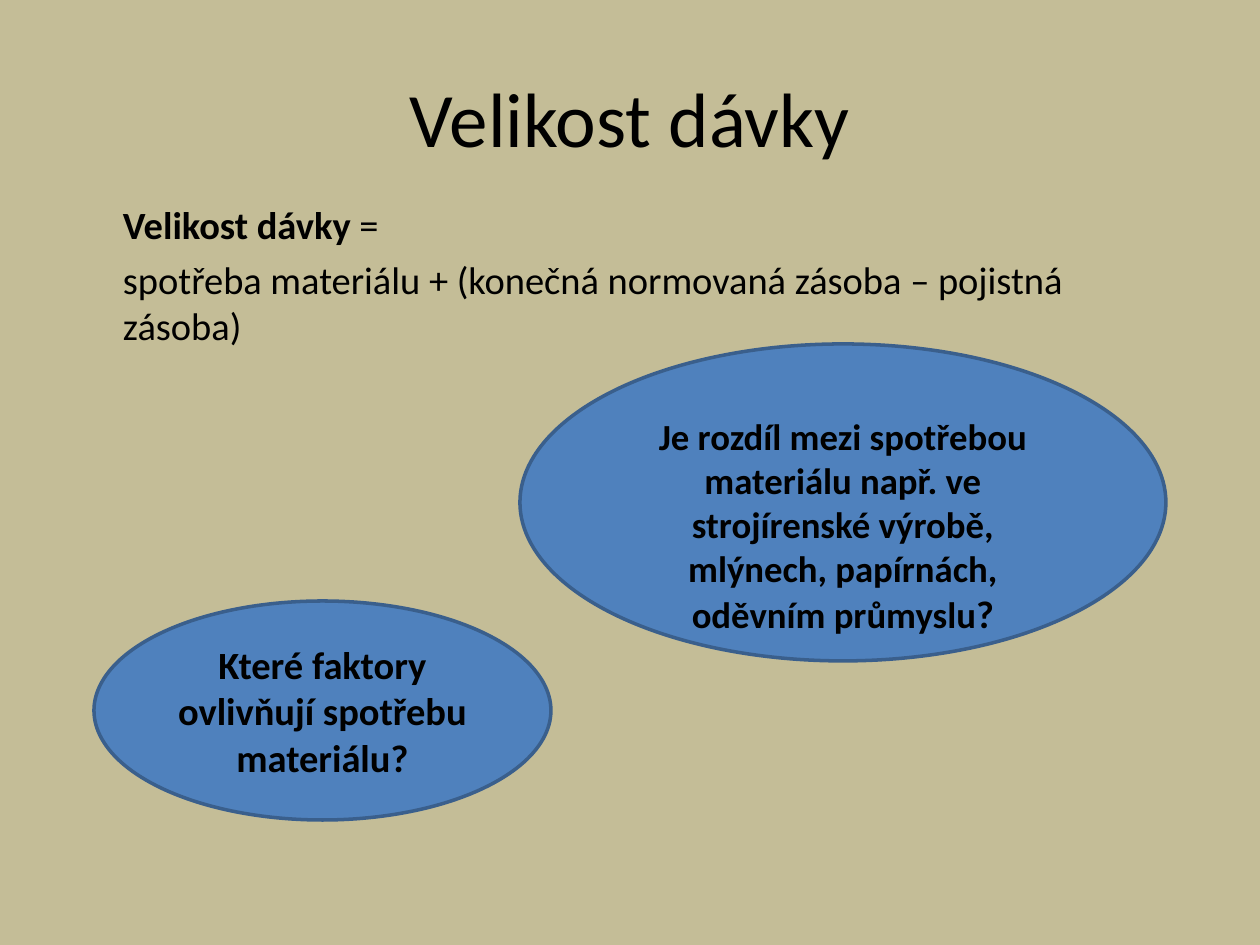
from dataclasses import dataclass

from pptx import Presentation
from pptx.dml.color import RGBColor
from pptx.enum.shapes import MSO_SHAPE
from pptx.enum.text import MSO_ANCHOR, PP_ALIGN
from pptx.util import Emu, Pt

PX = 914400 // 126
FONT = "Calibri"
COLORS = {"background": "C4BD97", "text": "000000", "fill": "4F81BD", "line": "3A5F8C"}
ELLIPSE = MSO_SHAPE.OVAL
TOP, MIDDLE = MSO_ANCHOR.TOP, MSO_ANCHOR.MIDDLE
LEFT, CENTER = PP_ALIGN.LEFT, PP_ALIGN.CENTER


@dataclass
class Run:
    text: str
    size: int = 22
    bold: bool = False


@dataclass
class Question:
    box: tuple[int, int, int, int]
    runs: list[Run]
    inset_top: int = 6


QUESTIONS = [
    Question((520, 344, 646, 317), [
        Run("Je rozdíl mezi spotřebou materiálu např. ve strojírenské výrobě, "
            "mlýnech, papírnách, oděvním průmyslu", 21, True),
        Run("?", 22, True),
    ], inset_top=51),
    Question((94, 601, 457, 219), [
        Run("Které faktory ovlivňují spotřebu materiálu?", bold=True),
    ]),
]


def px(value: int) -> Emu:
    return Emu(value * PX)


def color(name: str) -> RGBColor:
    return RGBColor.from_string(COLORS[name])


def write(sp, paragraphs: list[list[Run]], *, align=CENTER, anchor=MIDDLE,
          inset_left: int = 13, inset_top: int = 6, gap: float = 0) -> None:
    tf = sp.text_frame
    tf.word_wrap = True
    tf.vertical_anchor = anchor
    tf.margin_left, tf.margin_right = px(inset_left), px(13)
    tf.margin_top, tf.margin_bottom = px(inset_top), px(6)
    for i, runs in enumerate(paragraphs):
        p = tf.add_paragraph() if i else tf.paragraphs[0]
        p.alignment = align
        if i:
            p.space_before = Pt(gap)
        for run in runs:
            r = p.add_run()
            r.text = run.text
            r.font.name = FONT
            r.font.size = Pt(run.size)
            r.font.bold = run.bold
            r.font.color.rgb = color("text")


def draw_question(slide, question: Question) -> None:
    sp = slide.shapes.add_shape(ELLIPSE, *map(px, question.box))
    sp.shadow.inherit = False
    sp.fill.solid()
    sp.fill.fore_color.rgb = color("fill")
    sp.line.color.rgb = color("line")
    sp.line.width = Pt(2)
    write(sp, [question.runs], inset_top=question.inset_top)


def main() -> None:
    prs = Presentation()
    prs.slide_width, prs.slide_height = px(1260), px(945)
    slide = prs.slides.add_slide(prs.slide_layouts[6])
    slide.background.fill.solid()
    slide.background.fill.fore_color.rgb = color("background")

    title = slide.shapes.add_textbox(*map(px, (63, 38, 1134, 158)))
    write(title, [[Run("Velikost dávky", 44)]])

    formula = slide.shapes.add_textbox(*map(px, (63, 175, 1134, 669)))
    write(formula, [
        [Run("Velikost dávky ", bold=True), Run("=")],
        [Run("spotřeba materiálu + (konečná normovaná zásoba – pojistná zásoba)")],
    ], align=LEFT, anchor=TOP, inset_left=60, inset_top=26, gap=5)

    for question in QUESTIONS:
        draw_question(slide, question)
    prs.save("out.pptx")


if __name__ == "__main__":
    main()
